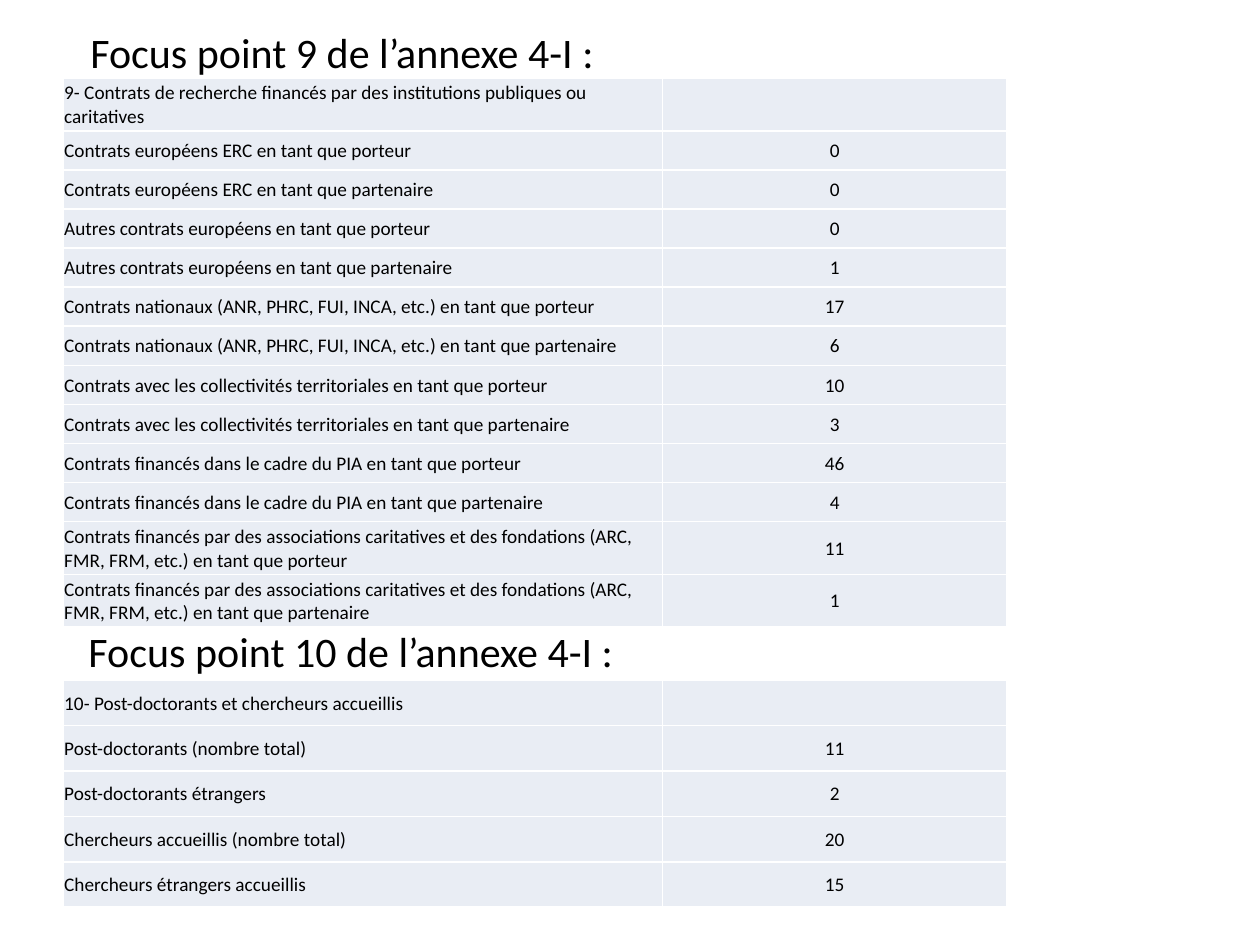
"""Slide with two tables of research contracts and hosted researchers."""
from lxml import etree
from pptx import Presentation
from pptx.dml.color import RGBColor
from pptx.enum.text import MSO_ANCHOR, MSO_AUTO_SIZE, PP_ALIGN
from pptx.oxml.ns import qn
from pptx.util import Inches, Pt

LEFT, CENTER = PP_ALIGN.LEFT, PP_ALIGN.CENTER
MIDDLE, NO_FIT = MSO_ANCHOR.MIDDLE, MSO_AUTO_SIZE.NONE
COLORS = {"text": "000000", "cell": "E9EDF4", "border": "FFFFFF"}
FONT = "Calibri"
TITLE_SIZE, CELL_SIZE = 24, 11
TABLE_LEFT, COLUMNS = 0.5, (4.76, 2.73)
CELL_FORMAT = {
    "vertical_anchor": MIDDLE,
    "margin_left": Inches(0.01),
    "margin_right": Inches(0.01),
    "margin_top": Inches(0.01),
    "margin_bottom": 0,
}
HEADING_FORMAT = {"vertical_anchor": MIDDLE, "word_wrap": True, "auto_size": NO_FIT}

CONTRACTS = [
    ("9- Contrats de recherche financés par des institutions publiques ou caritatives", ""),
    ("Contrats européens ERC en tant que porteur", "0"),
    ("Contrats européens ERC en tant que partenaire", "0"),
    ("Autres contrats européens en tant que porteur", "0"),
    ("Autres contrats européens en tant que partenaire", "1"),
    ("Contrats nationaux (ANR, PHRC, FUI, INCA, etc.) en tant que porteur", "17"),
    ("Contrats nationaux (ANR, PHRC, FUI, INCA, etc.) en tant que partenaire", "6"),
    ("Contrats avec les collectivités territoriales en tant que porteur", "10"),
    ("Contrats avec les collectivités territoriales en tant que partenaire", "3"),
    ("Contrats financés dans le cadre du PIA en tant que porteur", "46"),
    ("Contrats financés dans le cadre du PIA en tant que partenaire", "4"),
    ("Contrats financés par des associations caritatives et des fondations "
     "(ARC, FMR, FRM, etc.) en tant que porteur", "11"),
    ("Contrats financés par des associations caritatives et des fondations "
     "(ARC, FMR, FRM, etc.) en tant que partenaire", "1"),
]
RESEARCHERS = [
    ("10- Post-doctorants et chercheurs accueillis", ""),
    ("Post-doctorants (nombre total)", "11"),
    ("Post-doctorants étrangers", "2"),
    ("Chercheurs accueillis (nombre total)", "20"),
    ("Chercheurs étrangers accueillis", "15"),
]
HEADINGS = [
    ("Focus point 9 de l’annexe 4-I :", (0.5, 0.3, 4.43, 0.22)),
    ("Focus point 10 de l’annexe 4-I :", (0.35, 5.05, 4.87, 0.22)),
]
TABLES = [
    {"rows": CONTRACTS, "top": 0.62, "single": 0.31, "double": 0.42},
    {"rows": RESEARCHERS, "top": 5.4, "single": 0.36, "double": 0.36},
]
WRAP_LENGTH = 75


def apply(target, values):
    for name, value in values.items():
        setattr(target, name, value)


def write(tf, text, size, align):
    p = tf.paragraphs[0]
    p.alignment = align
    r = p.add_run()
    r.text = text
    apply(r.font, {"name": FONT, "size": Pt(size)})
    r.font.color.rgb = RGBColor.from_string(COLORS["text"])


def add_heading(sp, text, box):
    apply(sp, dict(zip(("left", "top", "width", "height"), map(Inches, box))))
    apply(sp.text_frame, HEADING_FORMAT)
    write(sp.text_frame, text, TITLE_SIZE, CENTER)


def add_borders(cell):
    tc_pr = cell._tc.get_or_add_tcPr()
    for side in ("lnL", "lnR", "lnT", "lnB"):
        ln = etree.SubElement(tc_pr, qn(f"a:{side}"), w=str(Pt(1)))
        fill = etree.SubElement(ln, qn("a:solidFill"))
        etree.SubElement(fill, qn("a:srgbClr"), val=COLORS["border"])


def add_data_table(slide, rows, top, single, double):
    heights = [double if len(label) > WRAP_LENGTH else single for label, _ in rows]
    box = map(Inches, (TABLE_LEFT, top, sum(COLUMNS), sum(heights)))
    table = slide.shapes.add_table(len(rows), len(COLUMNS), *box).table
    apply(table, {"first_row": False, "horz_banding": False})
    for column, width in zip(table.columns, COLUMNS):
        column.width = Inches(width)
    for row, height, texts in zip(table.rows, heights, rows):
        row.height = Inches(height)
        for cell, text, align in zip(row.cells, texts, (LEFT, CENTER)):
            apply(cell, CELL_FORMAT)
            add_borders(cell)
            cell.fill.solid()
            cell.fill.fore_color.rgb = RGBColor.from_string(COLORS["cell"])
            if text:
                write(cell.text_frame, text, CELL_SIZE, align)


def main():
    prs = Presentation()
    apply(prs, {"slide_width": Inches(10), "slide_height": Inches(7.5)})
    slide = prs.slides.add_slide(prs.slide_layouts[5])
    shapes = (slide.shapes.title, slide.shapes.add_textbox(0, 0, 0, 0))
    for sp, (text, box) in zip(shapes, HEADINGS):
        add_heading(sp, text, box)
    for table in TABLES:
        add_data_table(slide, **table)
    prs.save("out.pptx")


if __name__ == "__main__":
    main()
